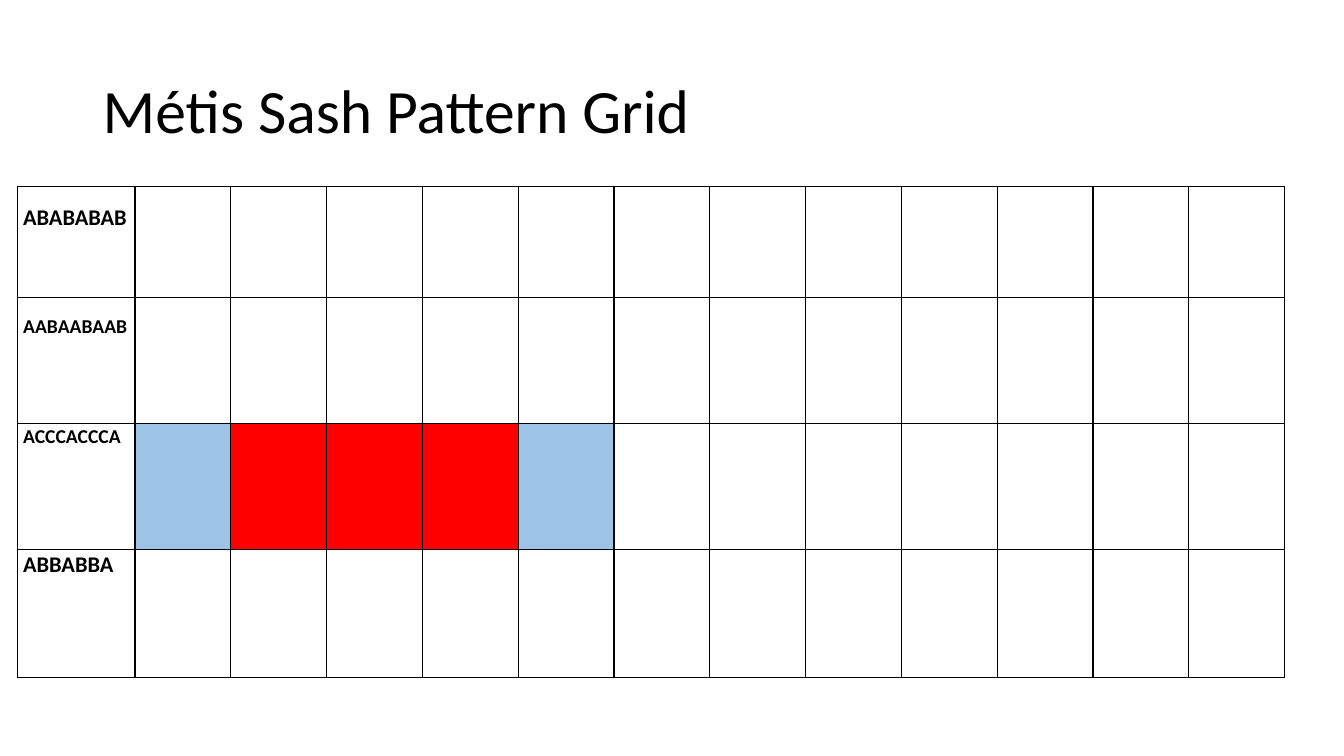
from lxml import etree
from pptx import Presentation
from pptx.dml.color import RGBColor
from pptx.enum import text
from pptx.oxml.ns import qn
from pptx.util import Inches, Pt

COLORS = {"black": "000000", "A": "9DC3E6", "C": "FF0000"}
FONT = "Calibri"
PATTERNS = [
    ("ABABABAB", 16, 0.16, 1.1, ""),
    ("AABAABAAB", 14, 0.16, 1.25, ""),
    ("ACCCACCCA", 14, 0, 1.25, "ACCCA"),
    ("ABBABBA", 16, 0, 1.27, ""),
]
STITCHES = 12
LABEL_WIDTH, STITCH_WIDTH = 1.17, 0.95


def add_borders(cell):
    tcPr = cell._tc.get_or_add_tcPr()
    for side in ("lnL", "lnR", "lnT", "lnB"):
        ln = etree.SubElement(tcPr, qn("a:" + side), w=str(Pt(1)))
        fill = etree.SubElement(ln, qn("a:solidFill"))
        etree.SubElement(fill, qn("a:srgbClr"), val=COLORS["black"])


def format_run(r, size, bold=False):
    r.font.name = FONT
    r.font.size = Pt(size)
    r.font.bold = bold
    r.font.color.rgb = RGBColor.from_string(COLORS["black"])


prs = Presentation()
prs.slide_width, prs.slide_height = Inches(13.33), Inches(7.5)
s = prs.slides.add_slide(prs.slide_layouts[6])

title = s.shapes.add_textbox(Inches(0.92), Inches(0.4), Inches(11.5), Inches(1.45))
tf = title.text_frame
tf.word_wrap = True
tf.vertical_anchor = text.MSO_ANCHOR.MIDDLE
p = tf.paragraphs[0]
p.text = "Métis Sash Pattern Grid"
p.line_spacing = 0.9
format_run(p.runs[0], 44)

width = LABEL_WIDTH + STITCHES * STITCH_WIDTH
height = sum(row_height for _, _, _, row_height, _ in PATTERNS)
grid = s.shapes.add_table(
    len(PATTERNS), STITCHES + 1, Inches(0.17), Inches(1.85), Inches(width), Inches(height)
).table
grid.first_row = False
grid.horz_banding = False
for i, column in enumerate(grid.columns):
    column.width = Inches(STITCH_WIDTH if i else LABEL_WIDTH)

for row, (label, size, top, row_height, stitches) in enumerate(PATTERNS):
    grid.rows[row].height = Inches(row_height)
    for col in range(STITCHES + 1):
        cell = grid.cell(row, col)
        add_borders(cell)
        if 0 < col <= len(stitches):
            cell.fill.solid()
            cell.fill.fore_color.rgb = RGBColor.from_string(COLORS[stitches[col - 1]])
        else:
            cell.fill.background()
    cell = grid.cell(row, 0)
    cell.margin_left = cell.margin_right = Inches(0.06)
    cell.margin_top, cell.margin_bottom = Inches(top), 0
    p = cell.text_frame.paragraphs[0]
    p.text = label
    p.line_spacing = 1.07
    format_run(p.runs[0], size, bold=True)

prs.save("out.pptx")
